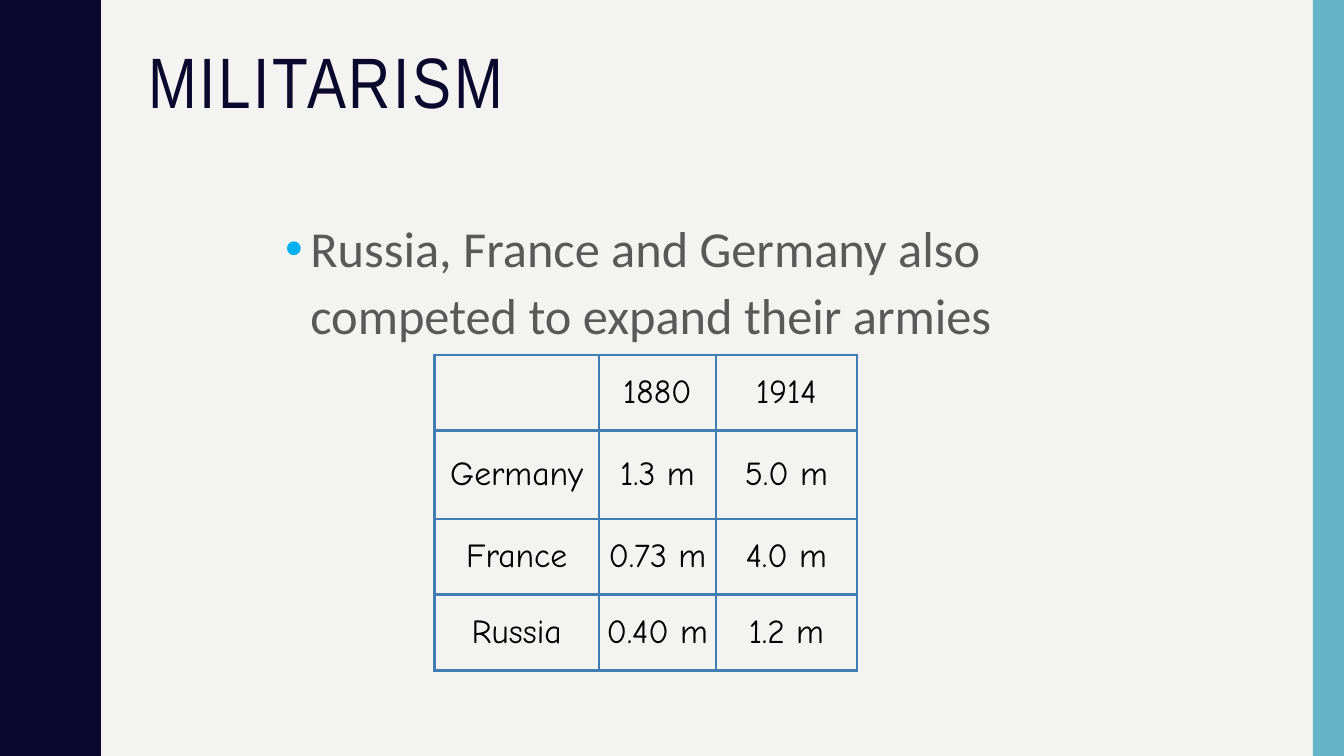
from dataclasses import dataclass

from lxml.etree import SubElement
from pptx import Presentation
from pptx.dml.color import RGBColor
from pptx.enum.shapes import MSO_SHAPE as Shape
from pptx.enum.text import MSO_ANCHOR as Anchor, PP_ALIGN as Align
from pptx.oxml.ns import qn
from pptx.util import Inches, Pt

NAVY, TEAL, PAPER = "0B082E", "62B4C6", "F3F3F2"
BULLET, GREY, BLACK, BORDER = "00B0F0", "595959", "000000", "417DB2"
WIDE, HIGH = 13.33, 7.5

# One rise of the wavy edge; each fall mirrors it.
RISE = [(0.78, 0), (0.78, 0.07), (0.79, 0.14), (0.8, 0.2), (0.81, 0.25),
        (0.83, 0.29), (0.85, 0.33), (0.87, 0.38), (0.89, 0.42), (0.91, 0.46),
        (0.93, 0.5), (0.95, 0.55), (0.96, 0.61), (0.97, 0.68), (0.97, 0.75)]
STEP, WAVES = 1.5, 5

COLS = [1.63, 1.16, 1.4]
ROWS = [0.75, 0.88, 0.75, 0.75]
ARMIES = [["", "1880", "1914"],
          ["Germany", "1.3 m", "5.0 m"],
          ["France", "0.73 m", "4.0 m"],
          ["Russia", "0.40 m", "1.2 m"]]


@dataclass
class Label:
    text: str
    box: tuple[float, float, float, float]
    font: str
    size: float
    color: str
    lead: float
    before: float = 0
    track: int = 0
    bullet: str = ""


LABELS = [
    Label("MILITARISM", (1.37, 0.42, 11.13, 1.63), "Arial Narrow", 51, NAVY,
          0.9, track=200),
    Label("Russia, France and Germany also competed to expand their armies",
          (2.28, 2.05, 8.4, 4.64), "Calibri", 36, GREY, 1.1, before=7,
          bullet="•"),
]


def rgb(color: str) -> RGBColor:
    return RGBColor.from_string(color)


def paint(item, color: str) -> None:
    item.fill.solid()
    item.fill.fore_color.rgb = rgb(color)


def finish(shape, color: str) -> None:
    """Flat fill with no line or shadow."""
    paint(shape, color)
    shape.line.fill.background()
    shape.shadow.inherit = False


def style(run, font: str, size: float, color: str) -> None:
    for name, value in {"name": font, "size": Pt(size), "bold": False}.items():
        setattr(run.font, name, value)
    run.font.color.rgb = rgb(color)


def add_wave(slide) -> None:
    cycle = RISE + [(x, STEP - y) for x, y in reversed(RISE[:-1])]
    edge = [(x, y + STEP * i) for i in range(WAVES) for x, y in cycle]
    path = slide.shapes.build_freeform(0, 0, scale=Inches(1))
    path.add_line_segments(edge + [(0, HIGH)], close=True)
    finish(path.convert_to_shape(), NAVY)


def add_bullet(para, mark: str) -> None:
    props = para._p.get_or_add_pPr()
    props.set("marL", str(Inches(0.7)))
    props.set("indent", str(Inches(-0.25)))
    tint = SubElement(props, qn("a:buClr"))
    SubElement(tint, qn("a:srgbClr"), val=BULLET)
    SubElement(props, qn("a:buFont"), typeface="Arial")
    SubElement(props, qn("a:buChar"), char=mark)


def add_label(slide, label: Label) -> None:
    frame = slide.shapes.add_textbox(*map(Inches, label.box)).text_frame
    frame.word_wrap = True
    para = frame.paragraphs[0]
    para.line_spacing = label.lead
    para.space_before = Pt(label.before)
    run = para.add_run()
    run.text = label.text
    style(run, label.font, label.size, label.color)
    if label.track:
        run._r.get_or_add_rPr().set("spc", str(label.track))
    if label.bullet:
        add_bullet(para, label.bullet)


def add_border(cell) -> None:
    props = cell._tc.get_or_add_tcPr()
    for side in ("lnL", "lnR", "lnT", "lnB"):
        line = SubElement(props, qn(f"a:{side}"), w=str(Pt(2)))
        fill = SubElement(line, qn("a:solidFill"))
        SubElement(fill, qn("a:srgbClr"), val=BORDER)


def fill_cell(cell, text: str) -> None:
    add_border(cell)
    cell.fill.background()
    cell.vertical_anchor = Anchor.MIDDLE
    for side in ("left", "right", "top", "bottom"):
        setattr(cell, f"margin_{side}", Inches(0.04))
    if text:
        para = cell.text_frame.paragraphs[0]
        para.alignment = Align.CENTER
        run = para.add_run()
        run.text = text
        style(run, "Comic Neue", 24, BLACK)


def add_armies(slide) -> None:
    box = map(Inches, (4.31, 3.52, sum(COLS), sum(ROWS)))
    table = slide.shapes.add_table(len(ROWS), len(COLS), *box).table
    table.first_row = table.horz_banding = False
    for col, width in zip(table.columns, COLS):
        col.width = Inches(width)
    for row, height, texts in zip(table.rows, ROWS, ARMIES):
        row.height = Inches(height)
        for cell, text in zip(row.cells, texts):
            fill_cell(cell, text)


def main() -> None:
    deck = Presentation()
    deck.slide_width, deck.slide_height = Inches(WIDE), Inches(HIGH)
    slide = deck.slides.add_slide(deck.slide_layouts[6])
    paint(slide.background, PAPER)
    add_wave(slide)
    band = slide.shapes.add_shape(
        Shape.RECTANGLE, *map(Inches, (13.02, 0, 0.31, HIGH)))
    finish(band, TEAL)
    for label in LABELS:
        add_label(slide, label)
    add_armies(slide)
    deck.save("out.pptx")


if __name__ == "__main__":
    main()
